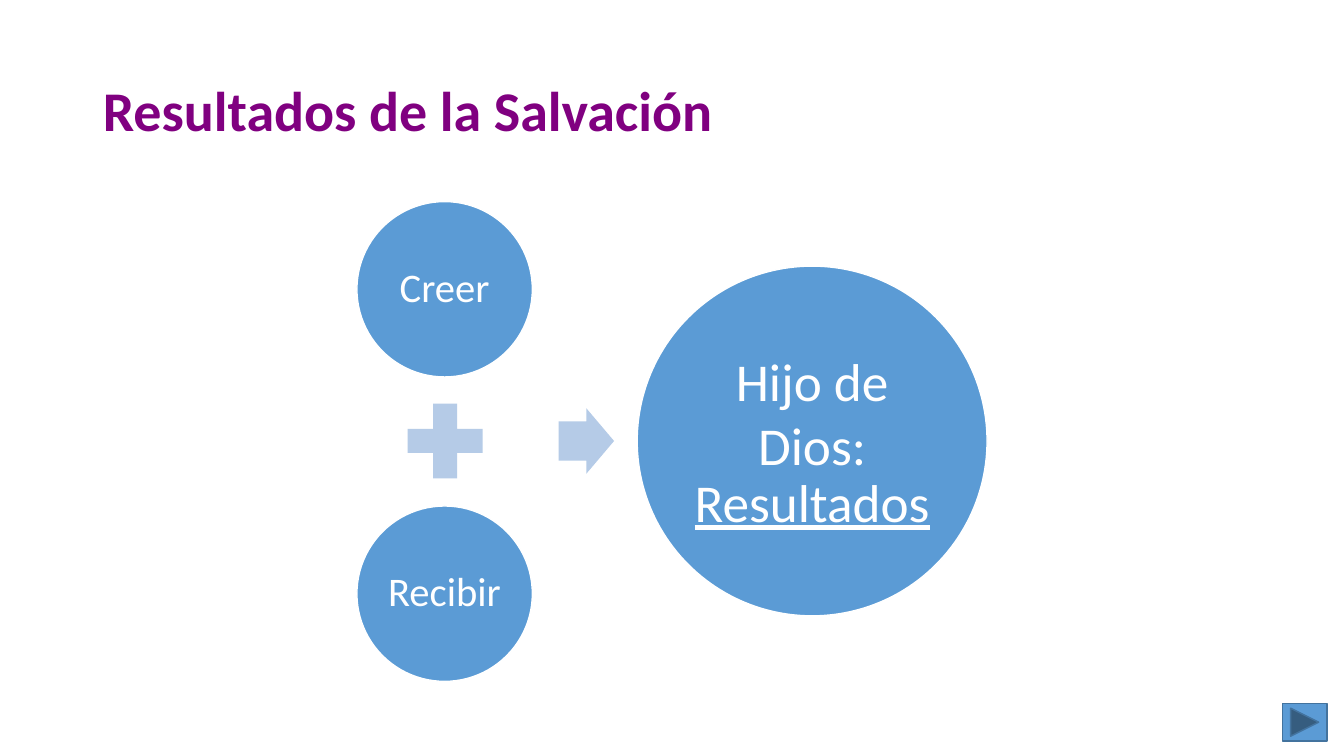
from pptx import Presentation
from pptx.dml.color import RGBColor
from pptx.enum.shapes import MSO_SHAPE as Shape
from pptx.enum.text import MSO_ANCHOR as Anchor, PP_ALIGN as Align
from pptx.util import Inches, Pt

BLUE, PALE_BLUE, DARK_BLUE = "5B9BD5", "B5CBE7", "43739E"
WHITE, PURPLE = "FFFFFF", "800080"


def add_figure(kind, left, top, width, height, fill, outline=None):
    figure = slide.shapes.add_shape(
        kind, Inches(left), Inches(top), Inches(width), Inches(height))
    figure.shadow.inherit = False
    figure.fill.solid()
    figure.fill.fore_color.rgb = RGBColor.from_string(fill)
    if outline:
        figure.line.color.rgb = RGBColor.from_string(outline)
        figure.line.width = Pt(1)
    else:
        figure.line.fill.background()
    return figure


def add_run(paragraph, text, size, color):
    run = paragraph.add_run()
    run.text = text
    run.font.name = "Calibri"
    run.font.size = Pt(size)
    run.font.color.rgb = RGBColor.from_string(color)
    return run


prs = Presentation()
prs.slide_width, prs.slide_height = Inches(13.33), Inches(7.5)
slide = prs.slides.add_slide(prs.slide_layouts[5])

title = slide.shapes.title
title.left, title.top = Inches(0.92), Inches(0.4)
title.width, title.height = Inches(11.5), Inches(1.45)
title.text_frame.vertical_anchor = Anchor.MIDDLE
heading = title.text_frame.paragraphs[0]
heading.alignment = Align.LEFT
heading.line_spacing = 0.9
add_run(heading, "Resultados de la Salvación", 40, PURPLE).font.bold = True

# Each circle: left, top, diameter, margin, size, (text, line spacing, underline)
circles = [
    (3.54, 2, 1.74, 0.04, 29, [("Creer", 0.9, False)]),
    (3.54, 5.02, 1.74, 0.04, 29, [("Recibir", 0.9, False)]),
    (6.32, 2.64, 3.47, 0.05, 38,
     [("Hijo de Dios:", 1.0, False), ("Resultados", 0.9, True)]),
]
for left, top, diameter, margin, size, lines in circles:
    circle = add_figure(Shape.OVAL, left, top, diameter, diameter, BLUE, WHITE)
    frame = circle.text_frame
    frame.word_wrap = True
    frame.vertical_anchor = Anchor.MIDDLE
    frame.margin_left = frame.margin_right = Inches(margin)
    frame.margin_top = frame.margin_bottom = Inches(margin)
    for index, (text, spacing, underline) in enumerate(lines):
        paragraph = frame.add_paragraph() if index else frame.paragraphs[0]
        paragraph.alignment = Align.CENTER
        paragraph.line_spacing = spacing
        run = add_run(paragraph, text, size, WHITE)
        if underline:
            run.font.underline = True

add_figure(Shape.MATH_PLUS, 3.91, 3.87, 1.01, 1.01, PALE_BLUE)
arrow = add_figure(Shape.RIGHT_ARROW, 5.54, 4.05, 0.55, 0.65, PALE_BLUE)
arrow.adjustments[0] = 0.6
add_figure(Shape.ACTION_BUTTON_FORWARD_OR_NEXT,
           12.72, 6.98, 0.44, 0.37, BLUE, DARK_BLUE)

prs.save("out.pptx")
